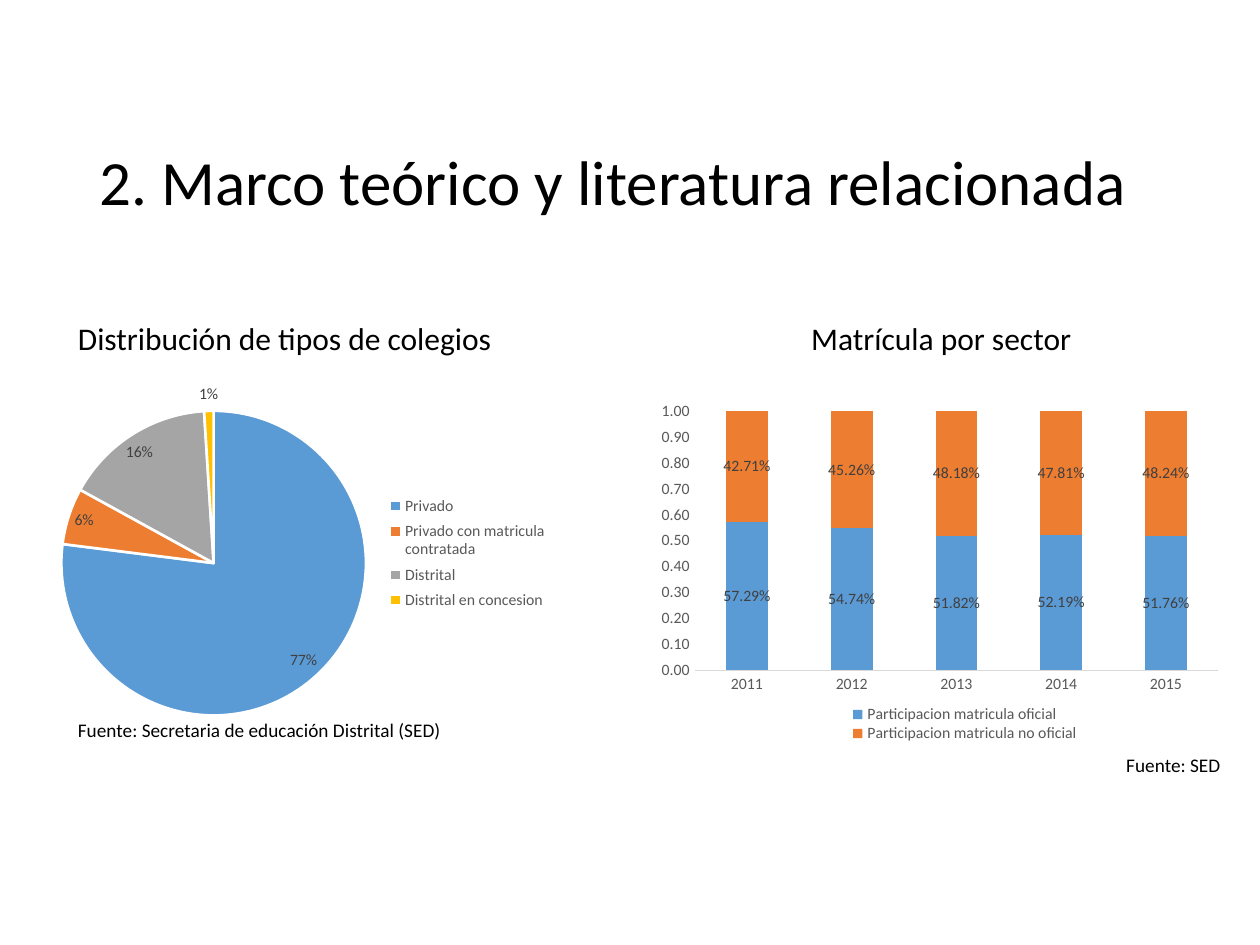
from dataclasses import dataclass

from lxml.etree import SubElement
from pptx import Presentation
from pptx.chart.data import CategoryChartData
from pptx.dml.color import RGBColor
from pptx.enum.chart import XL_CHART_TYPE, XL_LABEL_POSITION, XL_LEGEND_POSITION, XL_TICK_MARK
from pptx.enum.text import MSO_ANCHOR, PP_ALIGN
from pptx.oxml import parse_xml
from pptx.oxml.ns import nsdecls, qn
from pptx.util import Inches, Pt


@dataclass(frozen=True)
class Theme:
    font: str = "Calibri"
    black: str = "000000"
    white: str = "FFFFFF"
    label: str = "404040"
    muted: str = "595959"
    axis: str = "D9D9D9"
    series: tuple = ("5B9BD5", "ED7D31", "A5A5A5", "FFC000")
    title_size: float = 36
    heading_size: float = 18
    source_size: float = 11
    chart_size: float = 9


THEME = Theme()


def apply(target, values):
    for name, value in values.items():
        setattr(target, name, value)


def style_font(font, size, color):
    apply(font, {"name": THEME.font, "size": Pt(size)})
    font.color.rgb = RGBColor.from_string(color)


def fill(target, color):
    target.format.fill.solid()
    target.format.fill.fore_color.rgb = RGBColor.from_string(color)


def add_text(slide, box, text, size, alignment=PP_ALIGN.LEFT, anchor=MSO_ANCHOR.TOP, spacing=1.0):
    frame = slide.shapes.add_textbox(*map(Inches, box)).text_frame
    apply(frame, {"word_wrap": True, "vertical_anchor": anchor})
    paragraph = frame.paragraphs[0]
    apply(paragraph, {"text": text, "alignment": alignment, "line_spacing": spacing})
    style_font(paragraph.font, size, THEME.black)


def set_layout(parent, box, inner=False):
    """Place a plot area or legend at fractions of its chart."""
    for old in parent.findall(qn("c:layout")):
        parent.remove(old)
    layout = parse_xml(f"<c:layout {nsdecls('c')}/>")
    manual = SubElement(layout, qn("c:manualLayout"))
    values = {"layoutTarget": "inner"} if inner else {}
    values.update(xMode="edge", yMode="edge", **dict(zip("xywh", box)))
    for name, value in values.items():
        SubElement(manual, qn(f"c:{name}")).set("val", str(value))
    position = parent.find(qn("c:legendPos"))
    parent.insert(0 if position is None else 1, layout)


def add_chart(slide, box, kind, categories, series, plot_box, legend_position, legend_box):
    data = CategoryChartData()
    data.categories = categories
    for name, values in series:
        data.add_series(name, values)
    chart = slide.shapes.add_chart(kind, *map(Inches, box), data).chart
    apply(chart, {"has_title": False, "has_legend": True})
    style_font(chart.font, THEME.chart_size, THEME.muted)
    apply(chart.legend, {"position": legend_position, "include_in_layout": False})
    style_font(chart.legend.font, THEME.chart_size, THEME.muted)
    set_layout(chart.legend._element, legend_box)
    set_layout(chart._chartSpace.find(f".//{qn('c:plotArea')}"), plot_box, inner=True)
    return chart


def style_labels(plot, values):
    plot.has_data_labels = True
    apply(plot.data_labels, values)
    style_font(plot.data_labels.font, THEME.chart_size, THEME.label)


def add_school_types(slide, left, top):
    # Heading, pie chart and source
    text_left = left + 0.39
    add_text(slide, (text_left, top, 3.51, 0.4), "Distribución de tipos de colegios", THEME.heading_size)
    chart = add_chart(
        slide, (left, top + 0.31, 4.29, 3.14), XL_CHART_TYPE.PIE,
        ["Privado ", "Privado con matricula contratada ", "Distrital", "Distrital en concesion"],
        [("Series 1", (77, 6, 16, 1))],
        (0.08, 0.15, 0.57, 0.77), XL_LEGEND_POSITION.RIGHT, (0.68, 0.35, 0.31, 0.32))
    plot = chart.plots[0]
    plot.vary_by_categories = True
    for index, color in enumerate(THEME.series):
        point = plot.series[0].points[index]
        fill(point, color)
        point.format.line.color.rgb = RGBColor.from_string(THEME.white)
        point.format.line.width = Pt(1.5)
    style_labels(plot, {"show_percentage": True, "show_value": False,
                        "number_format": "0%", "number_format_is_linked": False,
                        "position": XL_LABEL_POSITION.BEST_FIT})
    add_text(slide, (text_left, top + 3.17, 3.37, 0.29),
             "Fuente: Secretaria de educación Distrital (SED)", THEME.source_size)


def add_enrolment(slide, left, top):
    # Heading, stacked columns and source
    add_text(slide, (left + 0.72, top, 3.22, 0.4), "Matrícula por sector",
             THEME.heading_size, PP_ALIGN.CENTER)
    official = (0.5729, 0.5474, 0.5182, 0.5219, 0.5176)
    private = [round(1 - share, 4) for share in official]
    chart = add_chart(
        slide, (left, top + 0.4, 4.66, 3.05), XL_CHART_TYPE.COLUMN_STACKED,
        [str(year) for year in range(2011, 2016)],
        [("Participacion matricula oficial", official),
         ("Participacion matricula no oficial", private)],
        (0.08, 0.126, 0.892, 0.674), XL_LEGEND_POSITION.BOTTOM, (0.33, 0.89, 0.42, 0.1))
    plot = chart.plots[0]
    apply(plot, {"gap_width": 150, "overlap": 100, "vary_by_categories": False})
    for series, color in zip(plot.series, THEME.series):
        fill(series, color)
    style_labels(plot, {"show_value": True, "number_format": "0.00%",
                        "number_format_is_linked": False, "position": XL_LABEL_POSITION.CENTER})

    # Axes
    for axis in (chart.category_axis, chart.value_axis):
        apply(axis, {"major_tick_mark": XL_TICK_MARK.NONE, "minor_tick_mark": XL_TICK_MARK.NONE,
                     "has_major_gridlines": False})
        style_font(axis.tick_labels.font, THEME.chart_size, THEME.muted)
    category_line = chart.category_axis.format.line
    category_line.color.rgb = RGBColor.from_string(THEME.axis)
    category_line.width = Pt(0.75)
    apply(chart.value_axis, {"minimum_scale": 0, "maximum_scale": 1, "major_unit": 0.1})
    apply(chart.value_axis.tick_labels, {"number_format": "0.00", "number_format_is_linked": False})
    chart.value_axis.format.line.fill.background()
    add_text(slide, (left + 3.7, top + 3.45, 0.97, 0.29), "Fuente: SED", THEME.source_size)


def main():
    presentation = Presentation()
    apply(presentation, {"slide_width": Inches(10), "slide_height": Inches(7.5)})
    slide = presentation.slides.add_slide(presentation.slide_layouts[6])
    add_text(slide, (0.69, 1.09, 8.62, 0.76), "2. Marco teórico y literatura relacionada",
             THEME.title_size, anchor=MSO_ANCHOR.MIDDLE, spacing=0.9)
    add_school_types(slide, 0.13, 2.48)
    add_enrolment(slide, 5.14, 2.48)
    presentation.save("out.pptx")


if __name__ == "__main__":
    main()
